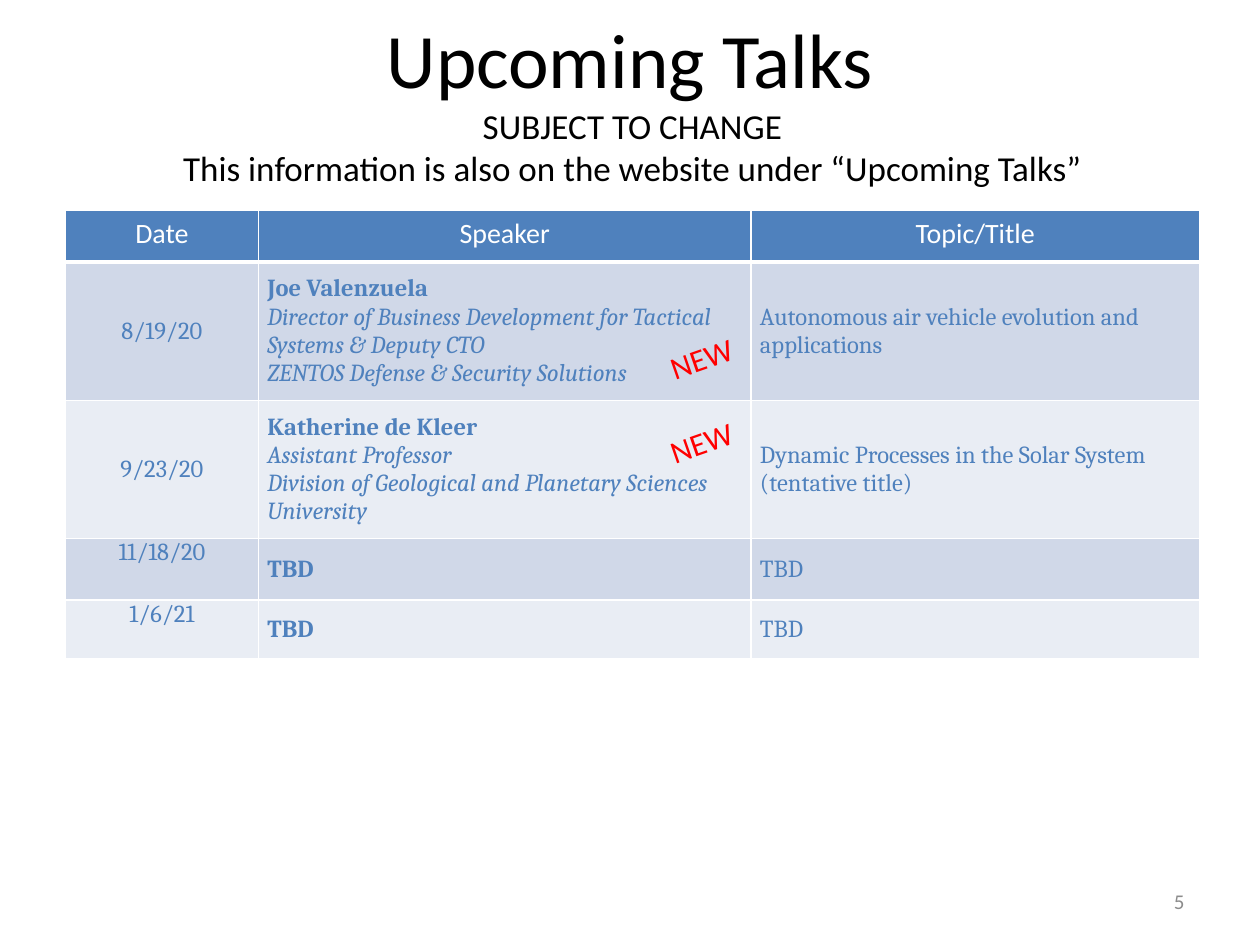
from lxml import etree
from pptx import Presentation
from pptx.dml.color import RGBColor
from pptx.enum.text import MSO_ANCHOR, PP_ALIGN
from pptx.oxml.ns import qn
from pptx.util import Cm, Pt

CENTER, LEFT, RIGHT = PP_ALIGN.CENTER, PP_ALIGN.LEFT, PP_ALIGN.RIGHT
TOP, MIDDLE = MSO_ANCHOR.TOP, MSO_ANCHOR.MIDDLE

COLORS = {
    "text": "000000", "white": "FFFFFF", "blue": "4F81BD",
    "band_dark": "D0D8E8", "band_light": "E9EDF4",
    "alert": "FF0000", "number": "8C8C8C",
}
HEADINGS = ["Date", "Speaker", "Topic/Title"]
# Date, date anchor, speaker name, speaker details, topic lines
TALKS = [
    ("8/19/20", MIDDLE, "Joe Valenzuela",
     ["Director of Business Development for Tactical Systems & Deputy CTO",
      "ZENTOS Defense & Security Solutions"],
     ["Autonomous air vehicle evolution and applications"]),
    ("9/23/20", MIDDLE, "Katherine de Kleer",
     ["Assistant Professor", "Division of Geological and Planetary Sciences", "University"],
     ["Dynamic Processes in the Solar System", "(tentative title)"]),
    ("11/18/20", TOP, "TBD", [], ["TBD"]),
    ("1/6/21", TOP, "TBD", [], ["TBD"]),
]
COLUMN_WIDTHS = [3.89, 9.93, 9.04]
ROW_HEIGHTS = [1.04, 2.79, 2.79, 1.24, 1.17]


def write_lines(frame, lines, align, color, **font_format):
    """Write one paragraph per (text, format changes) pair."""
    for index, (text, changes) in enumerate(lines):
        para = frame.paragraphs[0] if index == 0 else frame.add_paragraph()
        para.alignment = align
        span = para.add_run()
        span.text = text
        span.font.color.rgb = RGBColor.from_string(COLORS[color])
        values = {"name": "Calibri", "bold": False, "italic": False, **font_format, **changes}
        for name, value in values.items():
            setattr(span.font, name, value)


def plain(*texts):
    return [(text, {}) for text in texts]


def add_title(page, box, text):
    title = page.shapes.title
    title.left, title.top, title.width, title.height = map(Cm, box)
    title.text_frame.vertical_anchor = MIDDLE
    write_lines(title.text_frame, plain(text), CENTER, "text", size=Pt(44))


def add_text(page, box, texts, align, color, size, anchor=TOP, rotation=0):
    shape = page.shapes.add_textbox(*map(Cm, box))
    shape.rotation = rotation
    shape.text_frame.word_wrap = True
    shape.text_frame.vertical_anchor = anchor
    write_lines(shape.text_frame, plain(*texts), align, color, size=Pt(size))


def style_cell(cell, fill, bottom_width=1):
    """Give a cell white borders, then its fill."""
    properties = cell._tc.get_or_add_tcPr()
    for side, width in (("L", 1), ("R", 1), ("T", 1), ("B", bottom_width)):
        line = etree.SubElement(properties, qn(f"a:ln{side}"), w=str(Pt(width)))
        solid = etree.SubElement(line, qn("a:solidFill"))
        etree.SubElement(solid, qn("a:srgbClr"), val=COLORS["white"])
    cell.fill.solid()
    cell.fill.fore_color.rgb = RGBColor.from_string(COLORS[fill])


def add_schedule(page, box):
    table = page.shapes.add_table(len(TALKS) + 1, len(HEADINGS), *map(Cm, box)).table
    for column, width in zip(table.columns, COLUMN_WIDTHS):
        column.width = Cm(width)
    for row, height in zip(table.rows, ROW_HEIGHTS):
        row.height = Cm(height)

    # Header row
    for column, heading in enumerate(HEADINGS):
        cell = table.cell(0, column)
        style_cell(cell, "blue", bottom_width=3)
        write_lines(cell.text_frame, plain(heading), CENTER, "white", size=Pt(16))

    # One banded row per talk
    for row, (date, date_anchor, speaker, details, topic) in enumerate(TALKS, start=1):
        speaker_lines = [(speaker, {"bold": True})]
        speaker_lines += [(detail, {"italic": True}) for detail in details]
        contents = [
            (plain(date), CENTER, date_anchor),
            (speaker_lines, LEFT, MIDDLE),
            (plain(*topic), LEFT, MIDDLE),
        ]
        for column, (lines, align, anchor) in enumerate(contents):
            cell = table.cell(row, column)
            style_cell(cell, "band_dark" if row % 2 else "band_light")
            cell.vertical_anchor = anchor
            cell.margin_left = cell.margin_right = Cm(0.18)
            cell.margin_top = cell.margin_bottom = 0
            write_lines(cell.text_frame, lines, align, "blue", name="Cambria", size=Pt(14))


def main():
    deck = Presentation()
    deck.slide_width, deck.slide_height = Cm(25.4), Cm(19.05)
    page = deck.slides.add_slide(deck.slide_layouts.get_by_name("Title Only"))

    add_title(page, (0, -0.43, 25.4, 3.18), "Upcoming Talks")
    add_schedule(page, (1.32, 4.24, 22.86, 9.03))
    add_text(page, (1.32, 1.98, 22.86, 1.96),
             ["SUBJECT TO CHANGE",
              "This information is also on the website under “Upcoming Talks”"],
             CENTER, "text", 20)
    # Slide number
    add_text(page, (18.21, 17.65, 5.92, 1.02), ["5"], RIGHT, "number", 12, anchor=MIDDLE)
    # Tilted marks on the first two talks
    for top in (6.63, 8.33):
        add_text(page, (13.23, top, 2.24, 1.02), ["NEW"], LEFT, "alert", 18, rotation=340.8)

    deck.save("out.pptx")


if __name__ == "__main__":
    main()
